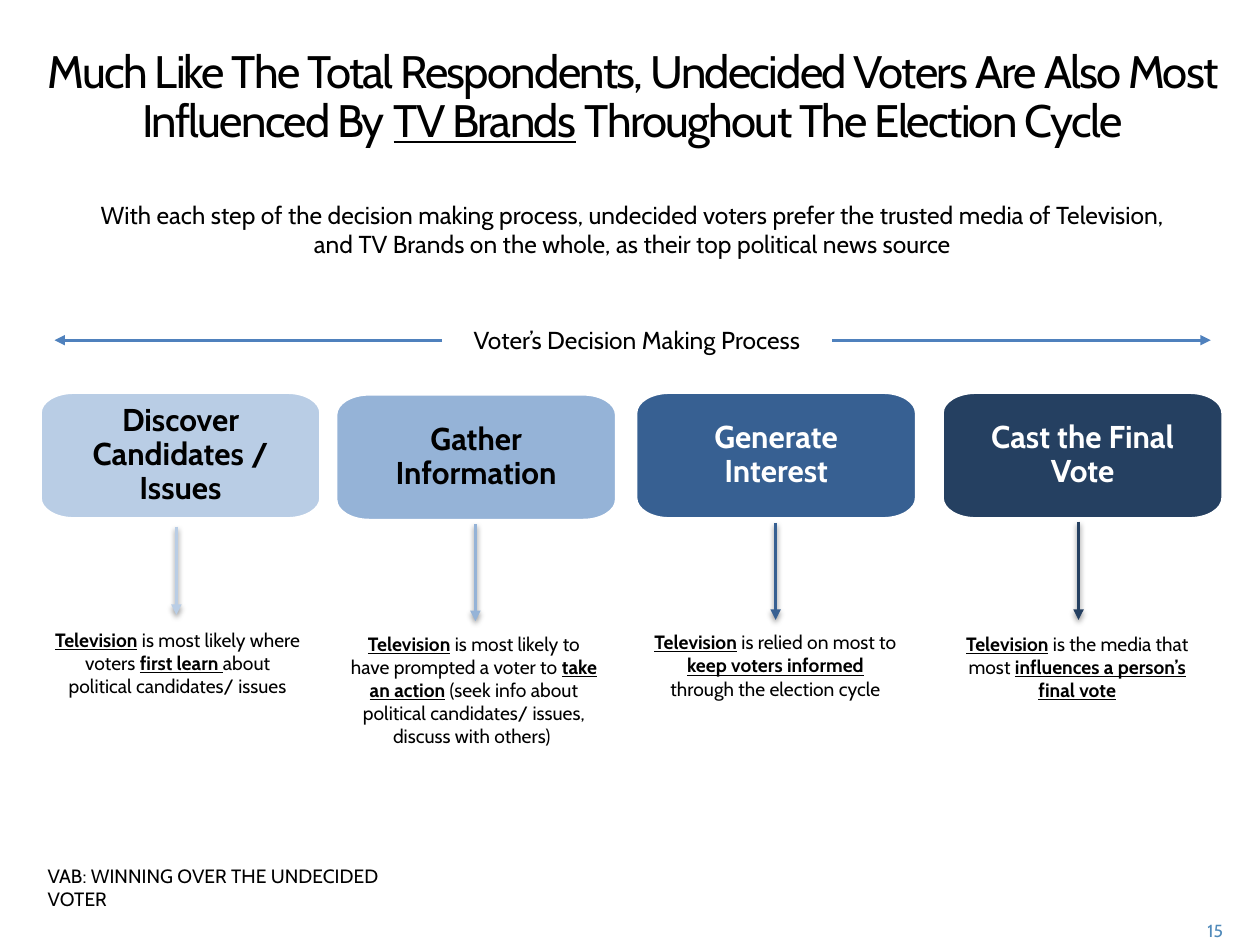
from lxml.etree import SubElement
from pptx import Presentation
from pptx.dml.color import RGBColor
from pptx.enum.shapes import MSO_CONNECTOR
from pptx.enum.text import MSO_ANCHOR, PP_ALIGN
from pptx.oxml.ns import qn
from pptx.util import Emu, Inches, Pt

COLORS = {
    "black": "000000", "white": "FFFFFF", "axis": "4F81BD", "number": "508ABA",
    "discover": "B9CDE5", "gather": "95B3D7", "interest": "376092", "vote": "254061",
}
WIDTH, HEIGHT = Inches(10), Inches(7.5)
STRONG = {"bold": True, "underline": True}
UNDERLINED = {"underline": True}

TITLE = [
    ("Much Like The Total Respondents, Undecided Voters Are Also Most Influenced By ", {}),
    ("TV Brands", UNDERLINED),
    (" Throughout The Election Cycle", {}),
]
TITLE_AREA = (1, 4.48, 98.4, 12.93)
SUBTITLE = ("With each step of the decision making process, undecided voters prefer the trusted "
            "media of Television, and TV Brands on the whole, as their top political news source")
LABELS = [
    (SUBTITLE, (5.4, 20.48, 89.6, 8.13), 14, "black", PP_ALIGN.CENTER),
    ("Voter’s Decision Making Process", (4.3, 33.73, 92.5, 4.53), 14, "black", PP_ALIGN.CENTER),
    ("VAB: WINNING OVER THE UNDECIDED VOTER", (2.8, 90.8, 32.9, 5.2), 11, "black", PP_ALIGN.LEFT),
    ("15", (91.95, 96.67, 6.1, 3.33), 10, "number", PP_ALIGN.RIGHT),
]
AXIS_Y = 36
AXIS_ARROWS = [(35.1, 4.33), (66.05, 96.1)]

CARD_WIDTH, CARD_HEIGHT = 22.3, 13.4
CORNER_X, CORNER_Y = 2.65, 2.2
CURVE = 0.55
STEPS = [
    {"name": "Discover Candidates / Issues", "fill": "discover", "ink": "black",
     "card": (3.18, 41.5), "arrow": (14, 55.73, 65.07), "note": (3.15, 65.85, 21.9, 11.2),
     "runs": [(" is most likely where voters ", {}), ("first learn ", STRONG),
              ("about political candidates/ issues", {})]},
    {"name": "Gather Information", "fill": "gather", "ink": "black",
     "card": (26.64, 41.68), "arrow": (37.73, 55.47, 65.73), "note": (26.67, 66.23, 21.9, 13.73),
     "runs": [(" is most likely to have prompted a voter to ", {}), ("take an action", STRONG),
              (" (seek info about political candidates/ issues, discuss with others) ", {})]},
    {"name": "Generate Interest", "fill": "interest", "ink": "white",
     "card": (50.45, 41.5), "arrow": (61.56, 55.33, 65.6), "note": (50.95, 66.08, 21.2, 8.8),
     "runs": [(" is relied on most to ", {}), ("keep voters informed", STRONG),
              (" through the election cycle", {})]},
    {"name": "Cast the Final Vote", "fill": "vote", "ink": "white",
     "card": (74.77, 41.5), "arrow": (85.6, 55.2, 65.6), "note": (74.95, 66.25, 21.1, 8.8),
     "runs": [(" is the media that most ", {}), ("influences a person’s final vote", STRONG)]},
]


def across(share):
    return Emu(round(WIDTH * share / 100))


def down(share):
    return Emu(round(HEIGHT * share / 100))


def color(name):
    return RGBColor.from_string(COLORS[name])


def apply(target, values):
    for name, value in values.items():
        setattr(target, name, value)


def area(left, top, width, height):
    return across(left), down(top), across(width), down(height)


def write(frame, runs, size, ink, align, frame_format=None, paragraph_format=None, spacing=None):
    apply(frame, {"word_wrap": True, "vertical_anchor": MSO_ANCHOR.TOP, **(frame_format or {})})
    paragraph = frame.paragraphs[0]
    apply(paragraph, {"alignment": align, "space_before": Pt(0), **(paragraph_format or {})})
    for text, emphasis in runs:
        run = paragraph.add_run()
        run.text = text
        apply(run.font, {"name": "Cabin", "size": Pt(size), "bold": False, **emphasis})
        run.font.color.rgb = color(ink)
        if spacing is not None:
            run.font._element.set("spc", str(spacing))


def add_text(place, runs, size, ink, align):
    write(slide.shapes.add_textbox(*area(*place)).text_frame, runs, size, ink, align)


def add_arrow(start, end, ink, weight, shadowed=False):
    arrow = slide.shapes.add_connector(
        MSO_CONNECTOR.STRAIGHT, across(start[0]), down(start[1]), across(end[0]), down(end[1]))
    arrow.line.color.rgb = color(ink)
    arrow.line.width = Pt(weight)
    SubElement(arrow.line._get_or_add_ln(), qn("a:tailEnd"), type="triangle")
    effects = SubElement(arrow._element.spPr, qn("a:effectLst"))
    if shadowed:
        shadow = SubElement(effects, qn("a:outerShdw"), blurRad=str(Pt(3.1)), dist=str(Pt(1.6)),
                            dir="5400000", rotWithShape="0")
        tint = SubElement(shadow, qn("a:srgbClr"), val=COLORS["black"])
        SubElement(tint, qn("a:alpha"), val="38000")


def card_outline(left, top):
    right, bottom = left + CARD_WIDTH, top + CARD_HEIGHT
    inner_left, inner_right = left + CORNER_X, right - CORNER_X
    inner_top, inner_bottom = top + CORNER_Y, bottom - CORNER_Y
    points = [
        (left, inner_top), (inner_left, top), (inner_right, top), (right, inner_top),
        (right, inner_bottom), (inner_right, bottom), (inner_left, bottom), (left, inner_bottom),
    ]
    return [(across(x), down(y)) for x, y in points]


def round_corners(card):
    points = [(int(point.get("x")), int(point.get("y"))) for point in card._element.iter(qn("a:pt"))]
    edges = list(card._element.iter(qn("a:lnTo")))
    for index in range(0, 8, 2):
        start, end = points[index], points[index + 1]
        corner = (start[0], end[1]) if index % 4 == 0 else (end[0], start[1])
        edge = edges[index]
        curve = edge.getparent().makeelement(qn("a:cubicBezTo"))
        handles = [[round(a + CURVE * (c - a)) for a, c in zip(point, corner)]
                   for point in (start, end)]
        for x, y in (*handles, end):
            SubElement(curve, qn("a:pt"), x=str(x), y=str(y))
        edge.getparent().replace(edge, curve)


def add_card(step):
    first, *others = card_outline(*step["card"])
    builder = slide.shapes.build_freeform(*first, scale=1.0)
    builder.add_line_segments(others, close=True)
    card = builder.convert_to_shape()
    round_corners(card)
    card.shadow.inherit = False
    card.fill.solid()
    card.fill.fore_color.rgb = color(step["fill"])
    card.line.color.rgb = color("white")
    card.line.width = Pt(2)
    margins = {f"margin_{side}": Inches(0.2) for side in ("left", "top", "right", "bottom")}
    write(card.text_frame, [(step["name"], {"bold": True})], 18, step["ink"], PP_ALIGN.CENTER,
          {"vertical_anchor": MSO_ANCHOR.MIDDLE, **margins}, {"line_spacing": 0.9})


deck = Presentation()
apply(deck, {"slide_width": WIDTH, "slide_height": HEIGHT})
slide = deck.slides.add_slide(deck.slide_layouts[5])

title = slide.shapes.title
apply(title, dict(zip(("left", "top", "width", "height"), area(*TITLE_AREA))))
write(title.text_frame, TITLE, 26, "black", PP_ALIGN.CENTER,
      paragraph_format={"line_spacing": Pt(28)}, spacing=-100)

for text, place, size, ink, align in LABELS:
    add_text(place, [(text, {})], size, ink, align)

for start, end in AXIS_ARROWS:
    add_arrow((start, AXIS_Y), (end, AXIS_Y), "axis", 1.5)

for step in STEPS:
    add_card(step)
    x, top, bottom = step["arrow"]
    add_arrow((x, top), (x, bottom), step["fill"], 2, shadowed=True)
    add_text(step["note"], [("Television", STRONG), *step["runs"]], 11, "black", PP_ALIGN.CENTER)

deck.save("out.pptx")
